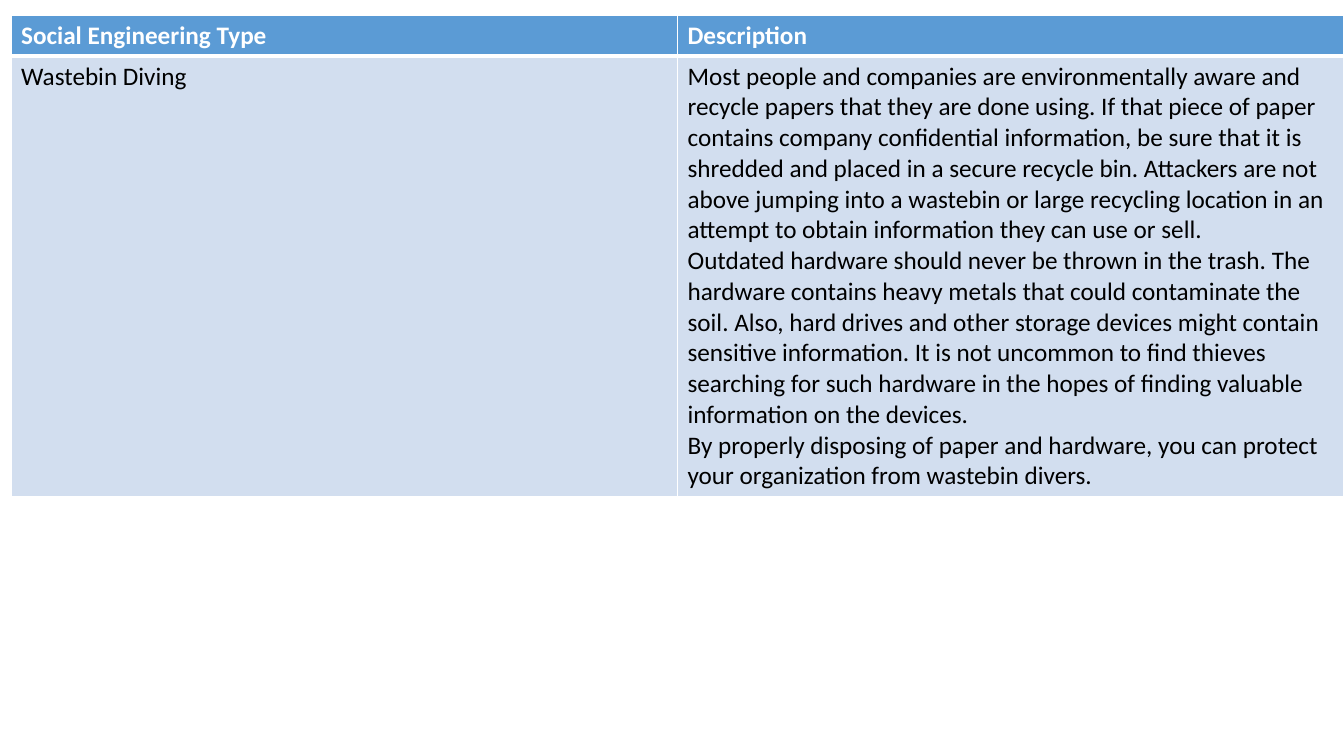
from pptx import Presentation
from pptx.dml.color import RGBColor
from pptx.oxml import parse_xml
from pptx.oxml.ns import nsdecls
from pptx.util import Inches, Pt

WHITE = RGBColor(0xFF, 0xFF, 0xFF)
BLACK = RGBColor(0, 0, 0)
BLUE = RGBColor(0x5B, 0x9B, 0xD5)
PALE = RGBColor(0xD2, 0xDE, 0xEF)

HEAD = ["Social Engineering Type", "Description"]
BODY = [
    "Wastebin Diving",
    "Most people and companies are environmentally aware and recycle papers "
    "that they are done using. If that piece of paper contains company "
    "confidential information, be sure that it is shredded and placed in a "
    "secure recycle bin. Attackers are not above jumping into a wastebin or "
    "large recycling location in an attempt to obtain information they can "
    "use or sell.\n"
    "Outdated hardware should never be thrown in the trash. The hardware "
    "contains heavy metals that could contaminate the soil. Also, hard drives "
    "and other storage devices might contain sensitive information. It is not "
    "uncommon to find thieves searching for such hardware in the hopes of "
    "finding valuable information on the devices.\n"
    "By properly disposing of paper and hardware, you can protect your "
    "organization from wastebin divers.",
]
# Text, format and border widths in points of each row
ROWS = [
    (HEAD, dict(color=WHITE, bold=True), BLUE, dict(L=1, R=1, T=1, B=3)),
    (BODY, dict(color=BLACK, bold=False), PALE, dict(L=1, R=1, T=3, B=1)),
]
LEFT, TOP = 0.11, 0.15
WIDE = 6.61
HIGH = [0.4, 4.3]


def write(frame, words, size=18, font="Calibri", color=BLACK, bold=False):
    frame.text = words
    for para in frame.paragraphs:
        for run in para.runs:
            run.font.size = Pt(size)
            run.font.name = font
            run.font.bold = bold
            run.font.color.rgb = color


def edge(cell, sides):
    """Draw white borders; call before the fill, which must follow them."""
    props = cell._tc.get_or_add_tcPr()
    for side, width in sides.items():
        props.append(parse_xml(
            f'<a:ln{side} {nsdecls("a")} w="{Pt(width)}"><a:solidFill>'
            f'<a:srgbClr val="{WHITE}"/></a:solidFill></a:ln{side}>'))


def main():
    deck = Presentation()
    deck.slide_width, deck.slide_height = Inches(13.33), Inches(7.5)
    slide = deck.slides.add_slide(deck.slide_layouts[6])
    table = slide.shapes.add_table(
        len(ROWS), len(HEAD), Inches(LEFT), Inches(TOP),
        Inches(WIDE * len(HEAD)), Inches(sum(HIGH))).table
    for col in table.columns:
        col.width = Inches(WIDE)
    for r, (texts, style, fill, sides) in enumerate(ROWS):
        table.rows[r].height = Inches(HIGH[r])
        for c, words in enumerate(texts):
            cell = table.cell(r, c)
            write(cell.text_frame, words, **style)
            edge(cell, sides)
            cell.fill.solid()
            cell.fill.fore_color.rgb = fill
    deck.save("out.pptx")


if __name__ == "__main__":
    main()
